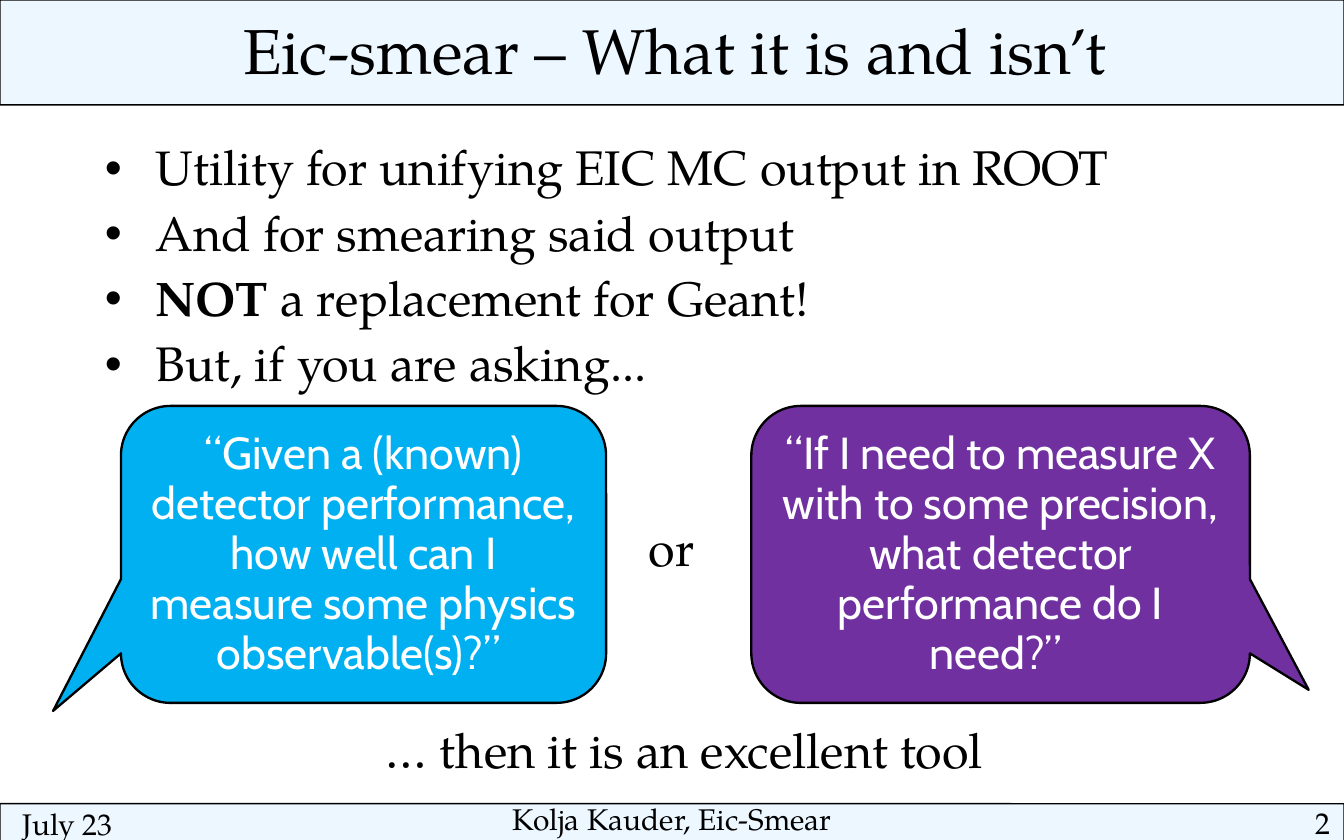
from lxml import etree
from pptx import Presentation
from pptx.dml.color import RGBColor
from pptx.enum.shapes import MSO_SHAPE
from pptx.enum.text import MSO_ANCHOR, PP_ALIGN
from pptx.oxml.ns import qn
from pptx.util import Inches, Pt

BLACK = RGBColor(0x00, 0x00, 0x00)
WHITE = RGBColor(0xFF, 0xFF, 0xFF)
PALE_BLUE = RGBColor(0xED, 0xF7, 0xFF)
CYAN = RGBColor(0x00, 0xB0, 0xF0)
PURPLE = RGBColor(0x70, 0x30, 0xA0)

SERIF = "TeX Gyre Pagella"
SANS = "Cabin"
LEFT, CENTER, RIGHT = PP_ALIGN.LEFT, PP_ALIGN.CENTER, PP_ALIGN.RIGHT
MIDDLE = MSO_ANCHOR.MIDDLE
BAR = MSO_SHAPE.ROUNDED_RECTANGLE
CALLOUT = MSO_SHAPE.ROUNDED_RECTANGULAR_CALLOUT

NO_INSETS = (0, 0, 0, 0)
INSETS = (0.1, 0.05, 0.1, 0.05)

BULLETS = [
    [("Utility for unifying EIC MC output in ROOT", False)],
    [("And for smearing said output", False)],
    [("NOT", True), (" a replacement for Geant!", False)],
    [("But, if you are asking...", False)],
]
QUESTIONS = [
    (0.9, 3.61, (-0.64, 0.527, 0.167), CYAN,
     "“Given a (known) detector performance, how well can I measure some physics observable(s)?” "),
    (5.59, 3.71, (0.618, 0.456, 0.167), PURPLE,
     "“If I need to measure X with to some precision, what detector performance do I need?” "),
]


def add_span(para, text, size, font=SERIF, color=BLACK, bold=False):
    """Append one formatted run to a paragraph."""
    span = para.add_run()
    span.text = text
    span.font.name = font
    span.font.size = Pt(size)
    span.font.bold = bold
    span.font.color.rgb = color


def add_box(page, left, top, width, height, insets=INSETS, wrap=True):
    """Add an empty text box and return its text frame."""
    box = page.shapes.add_textbox(Inches(left), Inches(top), Inches(width), Inches(height))
    frame = box.text_frame
    frame.word_wrap = wrap
    frame.margin_left, frame.margin_top, frame.margin_right, frame.margin_bottom = map(Inches, insets)
    return frame


def add_label(page, text, area, size, align=LEFT, spacing=0.93, insets=INSETS, wrap=False):
    """Add a text box holding one line."""
    para = add_box(page, *area, insets, wrap).paragraphs[0]
    para.alignment = align
    para.line_spacing = spacing
    add_span(para, text, size)


def add_panel(page, kind, area, adjustments, fill, line_width):
    """Add a filled, black-outlined preset shape."""
    panel = page.shapes.add_shape(kind, *map(Inches, area))
    panel.shadow.inherit = False
    for index, value in enumerate(adjustments):
        panel.adjustments[index] = value
    panel.fill.solid()
    panel.fill.fore_color.rgb = fill
    panel.line.color.rgb = BLACK
    panel.line.width = Pt(line_width)
    return panel


def add_callout(page, left, width, adjustments, fill, question):
    """Add a speech bubble with a question in it."""
    bubble = add_panel(page, CALLOUT, (left, 3.02, width, 2.21), adjustments, fill, 1.25)
    frame = bubble.text_frame
    frame.word_wrap = True
    frame.vertical_anchor = MIDDLE
    para = frame.paragraphs[0]
    para.alignment = CENTER
    para.line_spacing = 0.93
    add_span(para, question, 24, SANS, WHITE)


def set_bullet(para):
    """Give a paragraph a round bullet and a hanging indent."""
    properties = para._p.get_or_add_pPr()
    properties.set("marL", str(Inches(0.38)))
    properties.set("indent", str(Inches(-0.38)))
    etree.SubElement(properties, qn("a:buFont"), typeface="Arial")
    etree.SubElement(properties, qn("a:buChar"), char="•")


def add_bullets(page, items):
    """Add the bulleted list."""
    frame = add_box(page, 0.7, 1.02, 8.9, 2.46, (0.08, 0.04, 0.08, 0.04))
    for index, spans in enumerate(items):
        para = frame.add_paragraph() if index else frame.paragraphs[0]
        para.line_spacing = 0.93
        para.space_after = Pt(6)
        set_bullet(para)
        for text, bold in spans:
            add_span(para, text, 26, bold=bold)


def main():
    """Build the slide and save the deck."""
    deck = Presentation()
    deck.slide_width, deck.slide_height = Inches(10), Inches(6.25)
    page = deck.slides.add_slide(deck.slide_layouts[6])

    add_panel(page, BAR, (0, 5.98, 10, 0.28), [0.005], PALE_BLUE, 0.75)
    add_panel(page, BAR, (0, 0, 10, 0.78), [0.002], PALE_BLUE, 0.75)
    add_label(page, "July 23", (0.17, 5.96, 2.33, 0.43), 16, LEFT, 1.12, NO_INSETS, True)
    add_label(page, "Kolja Kauder, Eic-Smear", (2.09, 5.98, 5.82, 0.43), 16, CENTER, 0.92, NO_INSETS, True)
    add_label(page, "2", (7.57, 6.01, 2.33, 0.43), 16, RIGHT, 0.92, NO_INSETS, True)
    add_label(page, "Eic-smear – What it is and isn’t", (0.17, 0.06, 9.7, 0.58), 34, CENTER, 0.92,
              (0.08, 0.08, 0.08, 0.04))

    add_bullets(page, BULLETS)
    for question in QUESTIONS:
        add_callout(page, *question)
    add_label(page, "or", (4.73, 3.84, 0.55, 0.51), 26)
    add_label(page, "… then it is an excellent tool", (2.77, 5.35, 4.76, 0.51), 26)

    deck.save("out.pptx")


if __name__ == "__main__":
    main()
